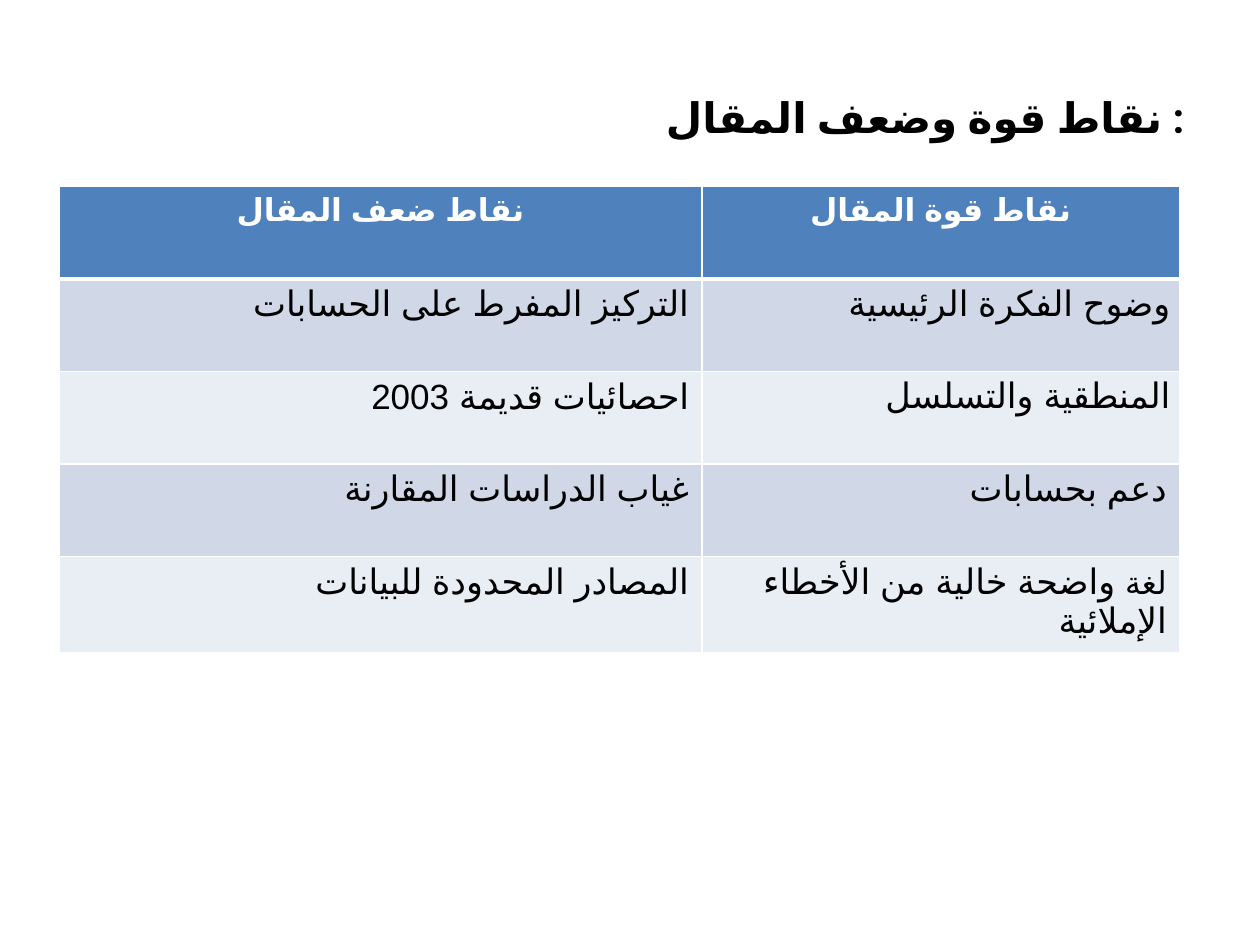
from lxml import etree
from pptx import Presentation
from pptx.dml.color import RGBColor
from pptx.enum.lang import MSO_LANGUAGE_ID
from pptx.enum.text import MSO_ANCHOR, PP_ALIGN
from pptx.oxml.ns import qn
from pptx.util import Inches, Pt

CENTER, RIGHT, JUSTIFY = PP_ALIGN.CENTER, PP_ALIGN.RIGHT, PP_ALIGN.JUSTIFY
MIDDLE = MSO_ANCHOR.MIDDLE
ARABIC = MSO_LANGUAGE_ID.ARABIC_ALGERIA
BLACK = RGBColor(0x00, 0x00, 0x00)
WHITE = RGBColor(0xFF, 0xFF, 0xFF)
HEADER = RGBColor(0x4F, 0x81, 0xBD)
BANDS = (RGBColor(0xD0, 0xD8, 0xE8), RGBColor(0xE9, 0xED, 0xF4))

TITLE = "نقاط قوة وضعف المقال :"
HEADINGS = ("نقاط ضعف المقال", "نقاط قوة المقال")
POINTS = [
    ("التركيز المفرط على الحسابات", "وضوح الفكرة الرئيسية"),
    ("احصائيات قديمة 2003", "المنطقية والتسلسل"),
    ("غياب الدراسات المقارنة", "دعم بحسابات"),
    ("المصادر المحدودة للبيانات", (("لغة", 18), (" واضحة خالية من الأخطاء الإملائية", 20))),
]
JUSTIFIED = {(1, 1), (2, 1)}
COL_WIDTHS = (5.1, 3.79)
TABLE_HEIGHT = 3.67


def add_run(p, text, size, color, bold=False, font="Calibri", cs_font="Arial"):
    r = p.add_run()
    r.text = text
    r.font.name = font
    r.font.size = Pt(size)
    r.font.bold = bold
    r.font.color.rgb = color
    r.font.language_id = ARABIC
    etree.SubElement(r._r.get_or_add_rPr(), qn("a:cs")).set("typeface", cs_font)


def add_borders(cell, top, bottom):
    tcPr = cell._tc.get_or_add_tcPr()
    widths = {"a:lnL": 1, "a:lnR": 1, "a:lnT": top, "a:lnB": bottom}
    for i, (tag, width) in enumerate(widths.items()):
        ln = etree.Element(qn(tag), w=str(Pt(width)))
        fill = etree.SubElement(ln, qn("a:solidFill"))
        etree.SubElement(fill, qn("a:srgbClr")).set("val", str(WHITE))
        tcPr.insert(i, ln)


def fill_cell(cell, runs, fill, color, align, bold=False, top=1, bottom=1):
    cell.fill.solid()
    cell.fill.fore_color.rgb = fill
    add_borders(cell, top, bottom)
    p = cell.text_frame.paragraphs[0]
    p.alignment = align
    for text, size in runs:
        add_run(p, text, size, color, bold)


def justify_rtl(cell):
    cell.margin_left = cell.margin_right = Inches(0.07)
    cell.margin_top = cell.margin_bottom = 0
    p = cell.text_frame.paragraphs[0]
    p.alignment = JUSTIFY
    p.line_spacing = 1.15
    p._p.get_or_add_pPr().set("rtl", "1")


prs = Presentation()
prs.slide_width, prs.slide_height = Inches(10), Inches(7.5)
s = prs.slides.add_slide(prs.slide_layouts[6])

tf = s.shapes.add_textbox(Inches(0.5), Inches(0.3), Inches(9), Inches(1.25)).text_frame
tf.word_wrap = True
tf.vertical_anchor = MIDDLE
tf.paragraphs[0].alignment = RIGHT
add_run(tf.paragraphs[0], TITLE, 24, BLACK, True, "Roboto", "Roboto")

rows = len(POINTS) + 1
table = s.shapes.add_table(rows, len(COL_WIDTHS), Inches(0.47), Inches(1.48),
                           Inches(sum(COL_WIDTHS)), Inches(TABLE_HEIGHT)).table
for col, width in zip(table.columns, COL_WIDTHS):
    col.width = Inches(width)
for row in table.rows:
    row.height = Inches(TABLE_HEIGHT / rows)

for j, heading in enumerate(HEADINGS):
    fill_cell(table.cell(0, j), [(heading, 18)], HEADER, WHITE, CENTER, True, bottom=3)
for i, points in enumerate(POINTS, 1):
    for j, point in enumerate(points):
        runs = [(point, 20)] if isinstance(point, str) else point
        fill_cell(table.cell(i, j), runs, BANDS[(i - 1) % 2], BLACK, RIGHT,
                  top=3 if i == 1 else 1)
for i, j in JUSTIFIED:
    justify_rtl(table.cell(i, j))

prs.save("out.pptx")
